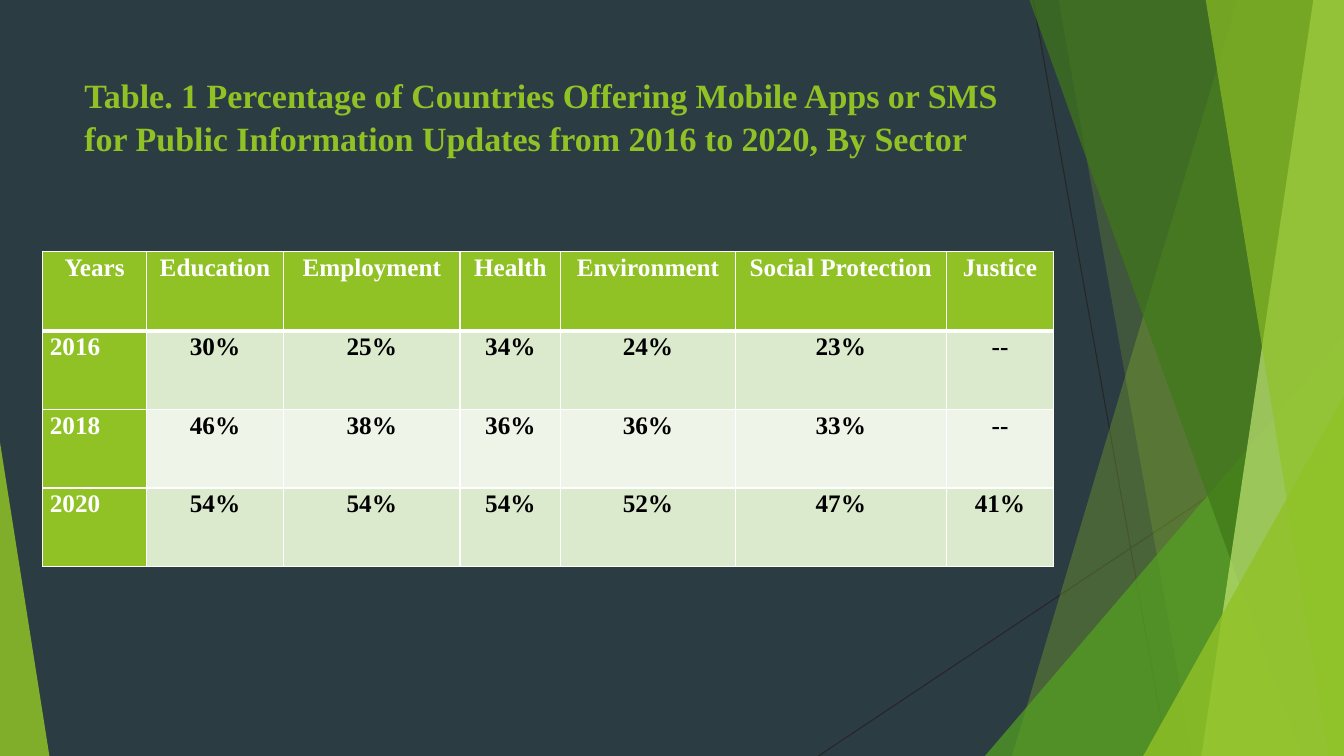
import lxml.etree
import pptx
import pptx.dml.color
import pptx.enum.shapes
import pptx.enum.text
import pptx.oxml.ns
import pptx.util

Pt = pptx.util.Pt
qn = pptx.oxml.ns.qn
ALIGN = pptx.enum.text.PP_ALIGN
FONT = "Times New Roman"
WIDTH, HEIGHT, TOP = 960, 540, -0.7
COLORS = {
    "background": "2C3C43",
    "thread": "262626",
    "lime": "90C226",
    "green": "54A021",
    "forest": "3F7819",
    "pale": "C0E474",
    "white": "FFFFFF",
    "black": "000000",
    "band": "DBE9CD",
    "band_light": "EEF4E8",
}
COLUMN_WIDTHS = [74, 98, 126, 72, 124.5, 151, 76.5]
ROW_HEIGHTS = [56.8, 56, 56, 56]
ROWS = [
    ["Years", "Education", "Employment", "Health", "Environment", "Social Protection", "Justice"],
    ["2016", "30%", "25%", "34%", "24%", "23%", "--"],
    ["2018", "46%", "38%", "36%", "36%", "33%", "--"],
    ["2020", "54%", "54%", "54%", "52%", "47%", "41%"],
]


def rgb(name):
    """Return the named colour."""
    return pptx.dml.color.RGBColor.from_string(COLORS[name])


def paint(shape, color, opacity):
    """Fill a shape with a translucent colour, without outline or shadow."""
    shape.shadow.inherit = False
    shape.line.fill.background()
    shape.fill.solid()
    shape.fill.fore_color.rgb = rgb(color)
    tint = next(shape.element.iter(qn("a:srgbClr")))
    lxml.etree.SubElement(tint, qn("a:alpha"), val=str(opacity * 1000))


def add_thread(page, x1, y1, x2, y2):
    """Draw a thin dark line."""
    line = page.shapes.add_connector(
        pptx.enum.shapes.MSO_CONNECTOR.STRAIGHT, Pt(x1), Pt(y1), Pt(x2), Pt(y2))
    line.line.color.rgb = rgb("thread")
    line.line.width = Pt(0.75)
    lxml.etree.SubElement(line.element.spPr, qn("a:effectLst"))


def add_facet(page, top_x, bottom_x, color, opacity):
    """Draw a full-height facet reaching the right edge."""
    builder = page.shapes.build_freeform(Pt(top_x), Pt(TOP))
    corners = [(WIDTH, TOP), (WIDTH, HEIGHT), (bottom_x, HEIGHT)]
    builder.add_line_segments([(Pt(x), Pt(y)) for x, y in corners], close=True)
    paint(builder.convert_to_shape(), color, opacity)


def add_corner(page, left, top, width, apex, color, opacity):
    """Draw a right triangle standing on the bottom edge."""
    shape = page.shapes.add_shape(
        pptx.enum.shapes.MSO_SHAPE.ISOSCELES_TRIANGLE,
        Pt(left), Pt(top), Pt(width), Pt(HEIGHT - top))
    shape.adjustments[0] = apex
    paint(shape, color, opacity)


def style_paragraph(para, size, color, align, spacing):
    """Set the bold serif type of a paragraph."""
    para.alignment = align
    para.line_spacing = spacing
    para.font.name = FONT
    para.font.size = Pt(size)
    para.font.bold = True
    para.font.color.rgb = rgb(color)


def add_title(page, text):
    """Place the slide title."""
    box = page.shapes.add_textbox(Pt(53.3), Pt(48.2), Pt(676.8), Pt(103.7))
    box.text_frame.word_wrap = True
    para = box.text_frame.paragraphs[0]
    para.text = text
    style_paragraph(para, 24.3, "lime", ALIGN.LEFT, 1.05)


def add_borders(cell, widths):
    """Give a cell white borders of the given widths by side."""
    properties = cell._tc.get_or_add_tcPr()
    for side, width in widths.items():
        line = lxml.etree.SubElement(properties, qn("a:ln" + side), w=str(Pt(width)))
        fill = lxml.etree.SubElement(line, qn("a:solidFill"))
        lxml.etree.SubElement(fill, qn("a:srgbClr"), val=COLORS["white"])


def fill_cell(cell, text, row, column):
    """Write and style one cell according to its place in the table."""
    heading = row == 0 or column == 0
    add_borders(cell, {"L": 1, "R": 1, "T": 3 if row == 1 else 1, "B": 3 if row == 0 else 1})
    cell.fill.solid()
    band = "band" if row % 2 else "band_light"
    cell.fill.fore_color.rgb = rgb("lime" if heading else band)
    cell.margin_left = cell.margin_right = Pt(5)
    cell.margin_top = cell.margin_bottom = Pt(0)
    para = cell.text_frame.paragraphs[0]
    para.text = text
    align = ALIGN.JUSTIFY if row and column == 0 else ALIGN.CENTER
    style_paragraph(para, 18, "white" if heading else "black", align, 1.07)


def add_sector_table(page):
    """Build the table of sectors by year."""
    table = page.shapes.add_table(
        len(ROWS), len(COLUMN_WIDTHS), Pt(30.6), Pt(179.8),
        Pt(sum(COLUMN_WIDTHS)), Pt(sum(ROW_HEIGHTS))).table
    table.first_row = table.horz_banding = False
    for column, width in zip(table.columns, COLUMN_WIDTHS):
        column.width = Pt(width)
    for row, height in zip(table.rows, ROW_HEIGHTS):
        row.height = Pt(height)
    for row, texts in enumerate(ROWS):
        for column, text in enumerate(texts):
            fill_cell(table.cell(row, column), text, row, column)


def add_backdrop(page):
    """Draw the background and its facets from back to front."""
    page.background.fill.solid()
    page.background.fill.fore_color.rgb = rgb("background")
    add_thread(page, 738, 0, 834, HEIGHT)
    add_thread(page, WIDTH, 290, 584.6, HEIGHT)
    add_facet(page, 884.2, 722.9, "lime", 30)
    add_facet(page, 756, 851.8, "lime", 20)
    add_corner(page, 703.5, 240, 256.5, 1, "green", 72)
    add_facet(page, 735.1, 929.5, "forest", 70)
    add_facet(page, 938.2, 858.2, "pale", 70)
    add_facet(page, 861.1, 949, "lime", 65)
    add_corner(page, 816.6, 283, 143.4, 1, "lime", 80)
    add_corner(page, 0, 316, 35.3, 0, "lime", 85)


def main():
    """Build and save the deck."""
    deck = pptx.Presentation()
    deck.slide_width, deck.slide_height = Pt(WIDTH), Pt(HEIGHT)
    page = deck.slides.add_slide(deck.slide_layouts[6])
    add_backdrop(page)
    add_title(page, "Table. 1 Percentage of Countries Offering Mobile Apps or SMS "
                    "for Public Information Updates from 2016 to 2020, By Sector")
    add_sector_table(page)
    deck.save("out.pptx")


if __name__ == "__main__":
    main()
